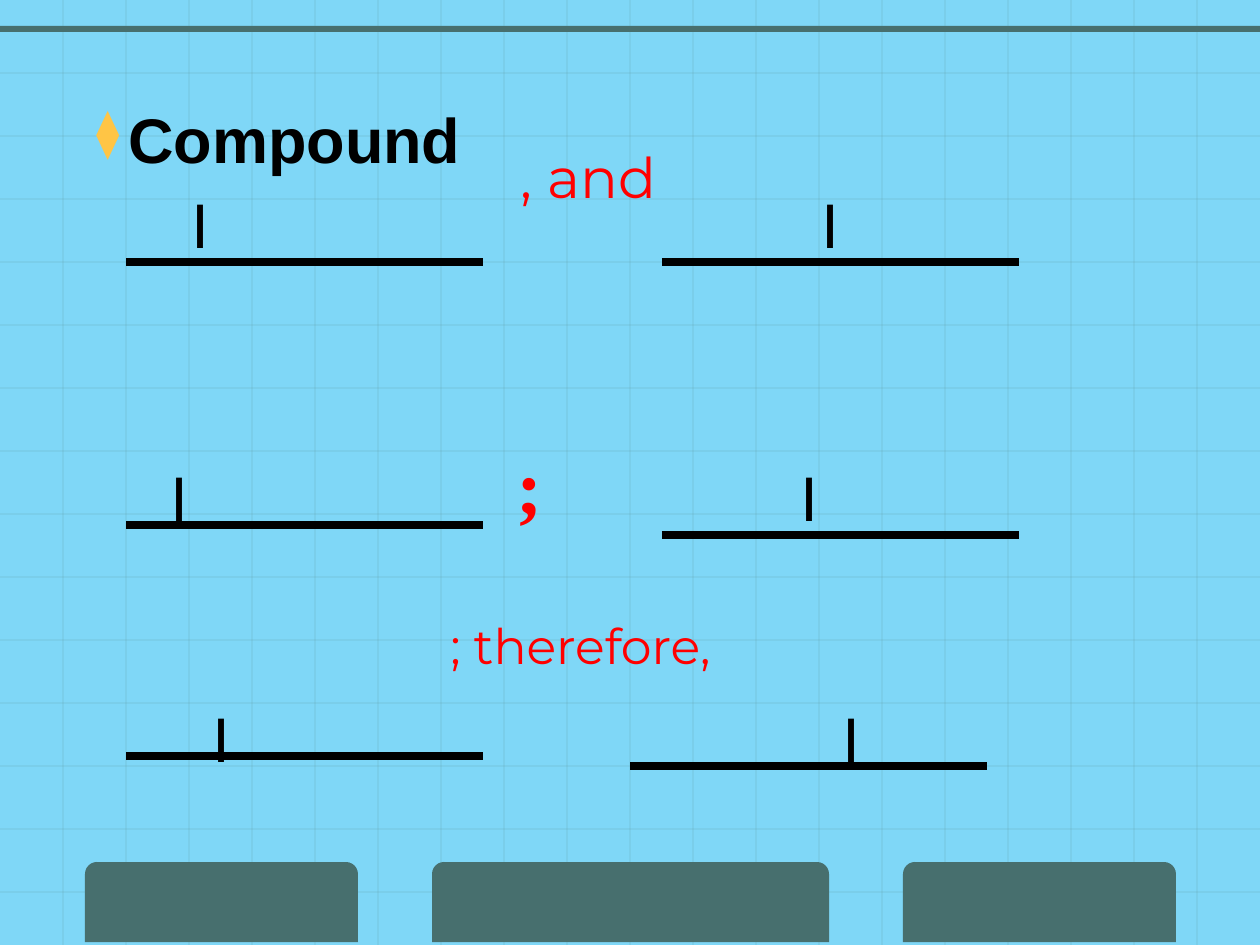
"""Build a slide of compound sentence patterns over a blue grid."""
from dataclasses import dataclass

from lxml import etree
from pptx import Presentation
from pptx.dml.color import RGBColor
from pptx.enum.shapes import MSO_CONNECTOR, MSO_SHAPE
from pptx.enum.text import MSO_ANCHOR, PP_ALIGN
from pptx.oxml.ns import qn
from pptx.util import Emu, Pt

STRAIGHT = MSO_CONNECTOR.STRAIGHT
RECTANGLE = MSO_SHAPE.RECTANGLE
TAB_SHAPE = MSO_SHAPE.ROUND_2_SAME_RECTANGLE
TOP = MSO_ANCHOR.TOP
LEFT, CENTER = PP_ALIGN.LEFT, PP_ALIGN.CENTER

SKY = RGBColor(0x7F, 0xD7, 0xF7)
GRID = RGBColor(0x60, 0x94, 0x94)
TEAL = RGBColor(0x47, 0x6F, 0x6E)
GOLD = RGBColor(0xFF, 0xC5, 0x45)
BLACK = RGBColor(0, 0, 0)
RED = RGBColor(0xFF, 0, 0)

PX_PER_INCH = 126
WIDTH, HEIGHT = 1260, 945
GRID_STEP, GRID_TOP = 63, 73
GRID_OPACITY = 20
BLANK_LENGTH = 357


@dataclass(frozen=True)
class Box:
    left: int
    top: int
    width: int
    height: int


@dataclass(frozen=True)
class Pattern:
    left_line_y: int
    right_line_x: int
    right_line_y: int
    subjects: Box


PATTERNS = (
    Pattern(262, 662, 262, Box(179, 179, 798, 88)),
    Pattern(525, 662, 535, Box(158, 452, 798, 88)),
    Pattern(756, 630, 766, Box(200, 693, 798, 88)),
)
FOOTER_TABS = (Box(85, 862, 273, 80), Box(432, 862, 397, 80), Box(903, 862, 273, 80))


def px(value: int) -> Emu:
    return Emu(round(value * 914400 / PX_PER_INCH))


def place(box: Box) -> tuple[Emu, ...]:
    return px(box.left), px(box.top), px(box.width), px(box.height)


def add_line(slide, start: tuple[int, int], end: tuple[int, int],
             color: RGBColor, weight: float, opacity: int = 100) -> None:
    line = slide.shapes.add_connector(STRAIGHT, *map(px, start + end))
    line.line.color.rgb = color
    line.line.width = Pt(weight)
    properties = line._element.spPr
    if opacity < 100:
        color_element = properties.find(".//" + qn("a:srgbClr"))
        etree.SubElement(color_element, qn("a:alpha"), val=str(opacity * 1000))
    etree.SubElement(properties, qn("a:effectLst"))


def add_block(slide, kind, box: Box):
    shape = slide.shapes.add_shape(kind, *place(box))
    shape.shadow.inherit = False
    shape.fill.solid()
    shape.fill.fore_color.rgb = TEAL
    shape.line.fill.background()
    return shape


def add_bullet(paragraph, character: str, color: RGBColor, percent: int, indent: int) -> None:
    properties = paragraph._p.get_or_add_pPr()
    properties.set("marL", str(px(indent)))
    properties.set("indent", str(-px(indent)))
    bullet_color = etree.SubElement(properties, qn("a:buClr"))
    etree.SubElement(bullet_color, qn("a:srgbClr"), val=str(color))
    etree.SubElement(properties, qn("a:buSzPct"), val=str(percent * 1000))
    etree.SubElement(properties, qn("a:buChar"), char=character)


def add_tab_stops(paragraph, count: int) -> None:
    tab_list = etree.SubElement(paragraph._p.get_or_add_pPr(), qn("a:tabLst"))
    for number in range(1, count + 1):
        etree.SubElement(tab_list, qn("a:tab"), pos=str(px(number * PX_PER_INCH)), algn="l")


def add_text(slide, text: str, box: Box, *, size: int, font: str = "Arial",
             color: RGBColor = BLACK, bold: bool = False, align=LEFT,
             wrap: bool = True, bulleted: bool = False) -> None:
    frame = slide.shapes.add_textbox(*place(box)).text_frame
    frame.word_wrap = wrap
    frame.vertical_anchor = TOP
    if not wrap:
        frame.margin_left = frame.margin_right = 0
    paragraph = frame.paragraphs[0]
    paragraph.alignment = align
    if bulleted:
        add_bullet(paragraph, "⧫", GOLD, 75, 32)
    if "\t" in text:
        add_tab_stops(paragraph, text.count("\t"))
    run = paragraph.add_run()
    run.text = text
    run.font.name = font
    run.font.size = Pt(size)
    run.font.bold = bold
    run.font.color.rgb = color


def add_backdrop(slide) -> None:
    slide.background.fill.solid()
    slide.background.fill.fore_color.rgb = SKY
    for x in range(GRID_STEP, WIDTH, GRID_STEP):
        add_line(slide, (x, 0), (x, HEIGHT), GRID, 0.75, GRID_OPACITY)
    for y in range(GRID_TOP, HEIGHT, GRID_STEP):
        add_line(slide, (0, y), (WIDTH, y), GRID, 0.75, GRID_OPACITY)
    for box in FOOTER_TABS:
        add_block(slide, TAB_SHAPE, box).adjustments[0] = 0.15
    add_block(slide, RECTANGLE, Box(0, 26, WIDTH, 6))


def add_pattern(slide, pattern: Pattern) -> None:
    for x, y in ((126, pattern.left_line_y), (pattern.right_line_x, pattern.right_line_y)):
        add_line(slide, (x, y), (x + BLANK_LENGTH, y), BLACK, 4.5)
    add_text(slide, "I\t\t\t\t\tI", pattern.subjects, size=36)


def main() -> None:
    presentation = Presentation()
    presentation.slide_width, presentation.slide_height = px(WIDTH), px(HEIGHT)
    slide = presentation.slides.add_slide(presentation.slide_layouts[6])
    add_backdrop(slide)
    add_text(slide, "Compound", Box(84, 94, 1071, 95), size=36, bold=True, bulleted=True)
    for pattern in PATTERNS:
        add_pattern(slide, pattern)
    add_text(slide, ", and", Box(514, 136, 149, 175), size=32, font="Montserrat",
             color=RED, align=CENTER, wrap=False)
    add_text(slide, ";", Box(504, 431, 126, 105), size=44, font="Times New Roman",
             color=RED, bold=True)
    add_text(slide, "; therefore,", Box(431, 609, 299, 159), size=28, font="Montserrat",
             color=RED, align=CENTER, wrap=False)
    presentation.save("out.pptx")


if __name__ == "__main__":
    main()
